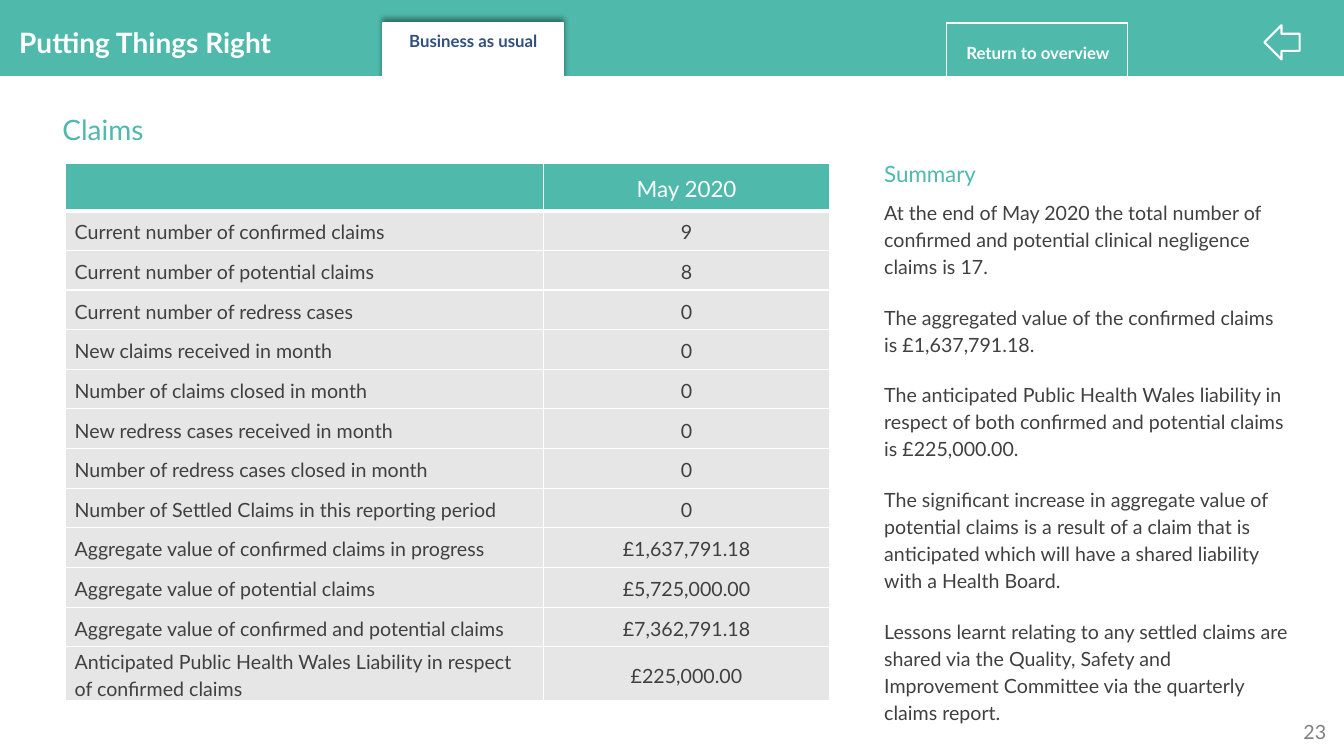
from lxml import etree
from pptx import Presentation, util as u
from pptx.dml import color
from pptx.enum import shapes, text
from pptx.oxml import ns, parse_xml

TEAL, NAVY, WHITE, GREY, INK = "4FB9AB", "324F82", "FFFFFF", "E7E6E6", "404040"
LEFT, CENTER = text.PP_ALIGN.LEFT, text.PP_ALIGN.CENTER
RECTANGLE = shapes.MSO_SHAPE.RECTANGLE
DRAWING = ns.nsdecls("a")

CLAIMS = [
    ("Current number of confirmed claims", "9"),
    ("Current number of potential claims", "8"),
    ("Current number of redress cases", "0"),
    ("New claims received in month", "0"),
    ("Number of claims closed in month", "0"),
    ("New redress cases received in month", "0"),
    ("Number of redress cases closed in month", "0"),
    ("Number of Settled Claims in this reporting period", "0"),
    ("Aggregate value of confirmed claims in progress", "£1,637,791.18"),
    ("Aggregate value of potential claims", "£5,725,000.00"),
    ("Aggregate value of confirmed and potential claims", "£7,362,791.18"),
    ("Anticipated Public Health Wales Liability in respect of confirmed claims",
     "£225,000.00"),
]
SUMMARY = [
    "At the end of May 2020 the total number of confirmed and potential clinical "
    "negligence claims is 17.",
    "The aggregated value of the confirmed claims is £1,637,791.18.",
    "The anticipated Public Health Wales liability in respect of both confirmed and "
    "potential claims is £225,000.00.",
    "The significant increase in aggregate value of potential claims is a result of a "
    "claim that is anticipated which will have a shared liability with a Health Board.",
    "Lessons learnt relating to any settled claims are shared via the Quality, Safety "
    "and Improvement Committee via the quarterly claims report.",
]


def rgb(value):
    return color.RGBColor.from_string(value)


def inches(*values):
    return [u.Inches(value) for value in values]


def set_values(target, values):
    for name, value in values.items():
        setattr(target, name, value)


def write(paragraph, words, size, ink, bold=False, **layout):
    """Fill one paragraph and set its font and spacing."""
    paragraph.text = words
    set_values(paragraph, layout)
    set_values(paragraph.font, {"name": "Lato", "size": u.Pt(size), "bold": bold})
    paragraph.font.color.rgb = rgb(ink)


def add_label(slide, box, words, size, ink, bold=False, align=LEFT, inset=True):
    frame = slide.shapes.add_textbox(*inches(*box)).text_frame
    frame.word_wrap = True
    if not inset:
        set_values(frame, dict.fromkeys(
            ("margin_left", "margin_top", "margin_right", "margin_bottom"), 0))
    write(frame.paragraphs[0], words, size, ink, bold, alignment=align)


def add_panel(slide, box, fill=None, line=None, width=1, kind=RECTANGLE):
    shape = slide.shapes.add_shape(kind, *inches(*box))
    shape.shadow.inherit = False
    if fill:
        shape.fill.solid()
        shape.fill.fore_color.rgb = rgb(fill)
    else:
        shape.fill.background()
    if line:
        shape.line.color.rgb = rgb(line)
        shape.line.width = u.Pt(width)
    else:
        shape.line.fill.background()
    return shape


def add_upward_shadow(shape):
    effects = shape._element.spPr.find(ns.qn("a:effectLst"))
    shadow = etree.SubElement(effects, ns.qn("a:outerShdw"), blurRad=str(u.Pt(4)),
                              dist=str(u.Pt(3)), dir="16200000", rotWithShape="0")
    ink = etree.SubElement(shadow, ns.qn("a:srgbClr"), val="000000")
    etree.SubElement(ink, ns.qn("a:alpha"), val="40000")


def format_cell(cell, fill=None, side=0.09, top=1, bottom=1):
    """Set margins, fill and white borders of a cell."""
    margin = u.Inches(side)
    set_values(cell, {"margin_left": margin, "margin_right": margin,
                      "margin_top": 0, "margin_bottom": 0})
    if fill:
        cell.fill.solid()
        cell.fill.fore_color.rgb = rgb(fill)
    else:
        cell.fill.background()
    properties = cell._tc.get_or_add_tcPr()
    borders = {"lnL": 1, "lnR": 1, "lnT": top, "lnB": bottom}
    for position, (tag, width) in enumerate(borders.items()):
        properties.insert(position, parse_xml(
            f'<a:{tag} {DRAWING} w="{u.Pt(width)}"><a:solidFill>'
            f'<a:srgbClr val="{WHITE}"/></a:solidFill></a:{tag}>'))


def add_grid(slide, box, widths, heights):
    table = slide.shapes.add_table(len(heights), len(widths), *inches(*box)).table
    set_values(table, {"first_row": False, "horz_banding": False})
    for column, width in zip(table.columns, widths):
        column.width = u.Inches(width)
    for row, height in zip(table.rows, heights):
        row.height = u.Inches(height)
    return table


def add_claims(slide):
    heights = [0.47] + [4.33 / 11] * 11 + [0.53]
    table = add_grid(slide, (0.65, 1.62, 7.58, 5.34), (4.74, 2.84), heights)
    for row, words in enumerate([("", "May 2020")] + CLAIMS):
        header = row == 0
        size, ink = (16, WHITE) if header else (14, INK)
        for column, align in enumerate((LEFT, CENTER)):
            cell = table.cell(row, column)
            format_cell(cell, TEAL if header else GREY,
                        top=3 if row == 1 else 1, bottom=3 if header else 1)
            cell.vertical_anchor = text.MSO_ANCHOR.MIDDLE
            write(cell.text_frame.paragraphs[0], words[column], size, ink,
                  alignment=align, line_spacing=1.15)


def add_summary(slide):
    cell = add_grid(slide, (8.65, 1.55, 4.26, 5.64), [4.26], [5.64]).cell(0, 0)
    format_cell(cell, side=0.12)
    frame = cell.text_frame
    write(frame.paragraphs[0], "Summary", 16, TEAL, line_spacing=1.15)
    for index, words in enumerate(SUMMARY):
        write(frame.add_paragraph(), words, 14, INK, line_spacing=1.15,
              space_before=u.Pt(17 if index else 7.4))


def main():
    presentation = Presentation()
    set_values(presentation, {"slide_width": u.Inches(13.33),
                              "slide_height": u.Inches(7.5)})
    slide = presentation.slides.add_slide(presentation.slide_layouts[6])

    # Header band and tabs, whose feet are hidden by the white page panel
    add_panel(slide, (0, 0, 13.33, 0.83), TEAL)
    add_label(slide, (0.19, 0.25, 3.39, 0.34), "Putting Things Right", 20, WHITE,
              bold=True, inset=False)
    add_upward_shadow(add_panel(slide, (3.8, 0.23, 1.79, 1.06), WHITE, WHITE))
    add_panel(slide, (9.39, 0.23, 1.79, 1.06), line=WHITE)
    add_panel(slide, (0, 0.76, 13.33, 1.46), WHITE, WHITE)
    for box, words, ink in (
            ((3.97, 0.31, 1.45, 0.4), "Business as usual", NAVY),
            ((9.24, 0.42, 2.11, 0.2), "Return to overview", WHITE)):
        add_label(slide, box, words, 12, ink, bold=True, align=CENTER, inset=False)
    arrow = add_panel(slide, (12.54, 0.25, 0.35, 0.34), line=WHITE, width=1.5,
                      kind=shapes.MSO_SHAPE.RIGHT_ARROW)
    arrow.rotation = 180

    # Page content
    add_label(slide, (0.52, 1.07, 9.31, 0.44), "Claims", 20, TEAL)
    add_label(slide, (12.83, 7.09, 0.46, 0.34), "23", 14, "808080")
    add_claims(slide)
    add_summary(slide)

    presentation.save("out.pptx")


if __name__ == "__main__":
    main()
